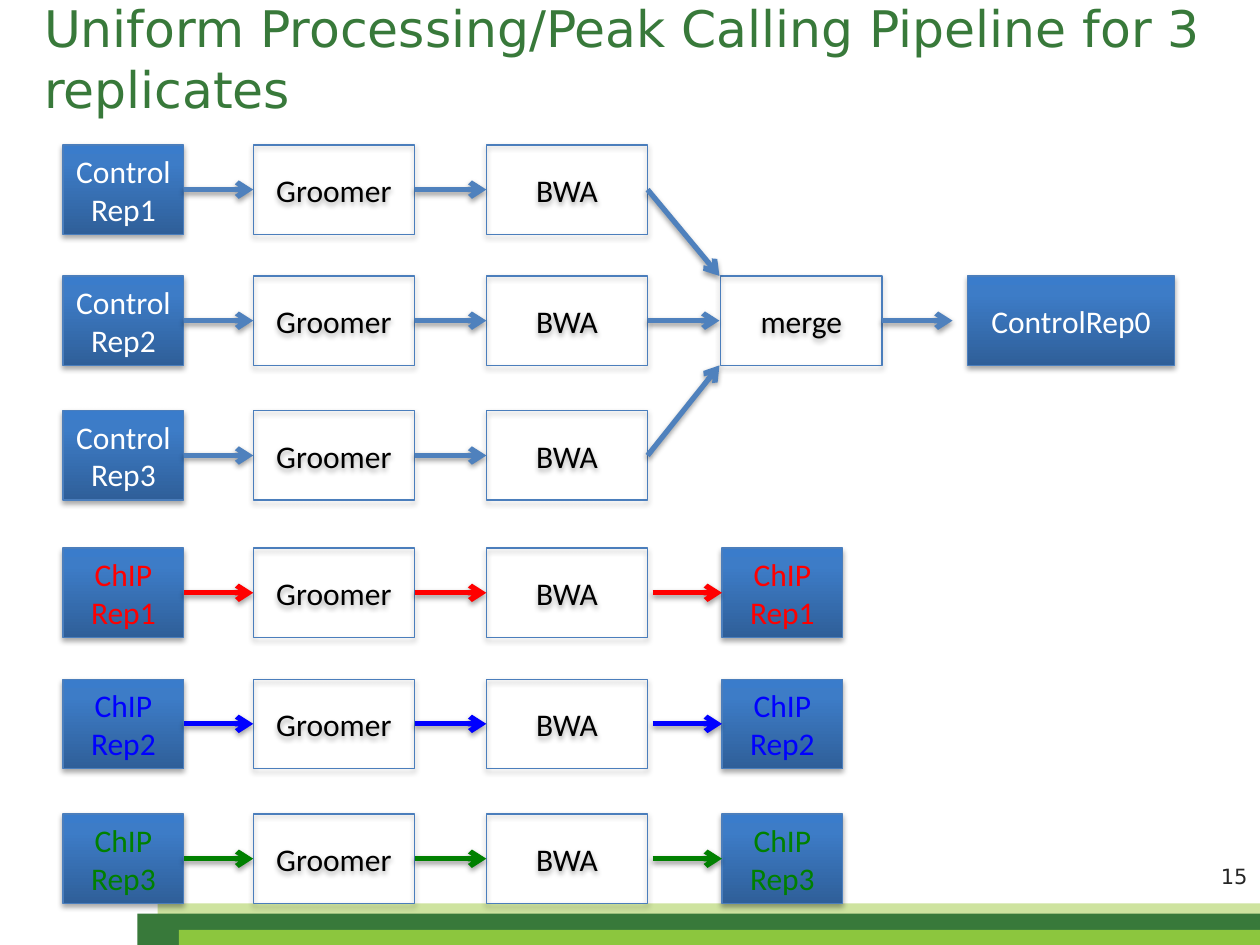
from copy import deepcopy
from dataclasses import dataclass

from pptx import Presentation
from pptx.dml.color import RGBColor as RGB
from pptx.enum.shapes import MSO_CONNECTOR as CONN, MSO_SHAPE as SHAPE
from pptx.enum.text import MSO_ANCHOR as ANCHOR, MSO_AUTO_SIZE as AUTO, PP_ALIGN as ALIGN
from pptx.oxml import parse_xml
from pptx.oxml.ns import nsdecls, qn
from pptx.util import Inches, Pt


@dataclass(frozen=True)
class Theme:
    """Colours, fonts and type sizes of the slide."""
    title: str = "38793A"
    number: str = "262626"
    bands: tuple = ("CEE39F", "38793A", "8CC63E")
    gradient: tuple = ((0, "2F5F99"), (0.8, "3D7CC7"), (1, "3A7CCB"))
    outline: str = "4B7EBC"
    flow: str = "4F81BD"
    light: str = "FFFFFF"
    dark: str = "000000"
    reps: tuple = ("FF0000", "0000FF", "008000")
    head_font: str = "DejaVu Sans"
    body_font: str = "Calibri"
    title_size: float = 28.8
    body_size: float = 18
    number_size: float = 12


@dataclass(frozen=True)
class Box:
    """A region in inches."""
    x: float
    y: float
    w: float
    h: float

    def emu(self):
        """Return left, top, width and height as lengths."""
        return [Inches(v) for v in (self.x, self.y, self.w, self.h)]


T = Theme()
COLS = (0, 1.51, 3.36, 5.22, 7.18)
ROWS = (0, 1.04, 2.11)
DATA_W, STEP_W, RESULT_W, NODE_H = 0.96, 1.28, 1.64, 0.71
GAP = 0.56


def style_text(tf, font, size, color, align):
    """Format every paragraph of a text frame."""
    tf.vertical_anchor = ANCHOR.MIDDLE
    for p in tf.paragraphs:
        p.alignment = align
        p.font.name, p.font.size = font, Pt(size)
        p.font.color.rgb = RGB.from_string(color)


def add_shadow(sp, dist, alpha):
    """Give a shape or connector a soft shadow below it."""
    spPr = sp._element.spPr
    spPr.append(parse_xml(
        f'<a:effectLst {nsdecls("a")}><a:outerShdw blurRad="40000" dist="{dist}" '
        f'dir="5400000" rotWithShape="0"><a:srgbClr val="000000">'
        f'<a:alpha val="{alpha}000"/></a:srgbClr></a:outerShdw></a:effectLst>'))


def fill_gradient(sp):
    """Fill a shape with the theme gradient, running upwards."""
    sp.fill.gradient()
    sp.fill.gradient_angle = 90
    stops = sp._element.spPr.find(qn("a:gradFill")).find(qn("a:gsLst"))
    stops.append(deepcopy(stops[0]))
    for stop, (pos, color) in zip(sp.fill.gradient_stops, T.gradient):
        stop.position = pos
        stop.color.rgb = RGB.from_string(color)


def node(s, box, text, color=T.dark, filled=False):
    """Add one labelled box of the pipeline."""
    sp = s.shapes.add_shape(SHAPE.RECTANGLE, *box.emu())
    if filled:
        fill_gradient(sp)
    else:
        sp.fill.background()
    sp.line.color.rgb = RGB.from_string(T.outline)
    sp.line.width = Pt(0.75)
    add_shadow(sp, 23000, 35)
    sp.text_frame.text = text
    style_text(sp.text_frame, T.body_font, T.body_size, color, ALIGN.CENTER)
    return sp


def arrow(s, start, end, color):
    """Draw an arrow between nodes or (x, y) points."""
    points = [Inches(v) if isinstance(e, tuple) else 0
              for e in (start, end) for v in (e if isinstance(e, tuple) else (0, 0))]
    line = s.shapes.add_connector(CONN.STRAIGHT, *points)
    if not isinstance(start, tuple):
        line.begin_connect(start, 3)
    if not isinstance(end, tuple):
        line.end_connect(end, 1)
    line.line.color.rgb = RGB.from_string(color)
    line.line.width = Pt(3)
    line.line._get_or_add_ln().append(parse_xml(f'<a:tailEnd {nsdecls("a")} type="arrow"/>'))
    add_shadow(line, 20000, 38)


def lane(s, x, y, text, text_color, flow):
    """Add input, Groomer and BWA in a row and return the BWA node."""
    source = node(s, Box(x, y, DATA_W, NODE_H), text, text_color, True)
    groomer, bwa = [node(s, Box(x + c, y, STEP_W, NODE_H), name)
                    for c, name in zip(COLS[1:3], ("Groomer", "BWA"))]
    arrow(s, source, groomer, flow)
    arrow(s, groomer, bwa, flow)
    return bwa


def control_block(s, box):
    """Add three control lanes merging into one result."""
    aligned = [lane(s, box.x, box.y + dy, f"ControlRep{i}", T.light, T.flow)
               for i, dy in enumerate(ROWS, 1)]
    x, y = box.x + COLS[3], box.y + ROWS[1]
    mid = y + NODE_H / 2
    merge = node(s, Box(x, y, STEP_W, NODE_H), "merge")
    for bwa, end_y in zip(aligned, (y, mid, y + NODE_H)):
        arrow(s, bwa, (x - 0.01, end_y), T.flow)
    node(s, Box(box.x + COLS[4], y, RESULT_W, NODE_H), "ControlRep0", T.light, True)
    arrow(s, merge, (x + STEP_W + GAP, mid), T.flow)


def chip_block(s, box):
    """Add three ChIP lanes, each ending in its own result."""
    for i, (dy, color) in enumerate(zip(ROWS, T.reps), 1):
        x, y, text = box.x + COLS[3], box.y + dy, f"ChIP\nRep{i}"
        lane(s, box.x, y, text, color, color)
        result = node(s, Box(x + 0.01, y, DATA_W, NODE_H), text, color, True)
        arrow(s, (x - GAP + 0.02, y + NODE_H / 2), result, color)


def footer(s, box):
    """Add the coloured bands and the slide number above them."""
    for (dx, dy), color in zip(((0.16, 0), (0, 0.08), (0.33, 0.21)), T.bands):
        band = Box(box.x + dx, box.y + dy, box.w - dx, box.h - dy)
        sp = s.shapes.add_shape(SHAPE.RECTANGLE, *band.emu())
        sp.shadow.inherit = False
        sp.fill.solid()
        sp.fill.fore_color.rgb = RGB.from_string(color)
        sp.line.fill.background()
    number = Box(box.x + box.w - 0.58, box.y - 0.42, 0.58, 0.4)
    tf = s.shapes.add_textbox(*number.emu()).text_frame
    tf.word_wrap = True
    tf.text = "15"
    style_text(tf, T.head_font, T.number_size, T.number, ALIGN.RIGHT)


def title(s, box):
    """Place and format the title placeholder."""
    sp = s.shapes.title
    sp.left, sp.top, sp.width, sp.height = box.emu()
    tf = sp.text_frame
    tf.text = "Uniform Processing/Peak Calling Pipeline for 3 replicates"
    tf.auto_size = AUTO.NONE
    style_text(tf, T.head_font, T.title_size, T.title, ALIGN.LEFT)


def main():
    """Build the slide and save it."""
    prs = Presentation()
    prs.slide_width, prs.slide_height = Inches(10), Inches(7.5)
    s = prs.slides.add_slide(prs.slide_layouts[5])
    footer(s, Box(1.09, 7.17, 8.91, 0.33))
    control_block(s, Box(0.5, 1.15, 8.82, 2.82))
    chip_block(s, Box(0.5, 4.35, 6.19, 2.82))
    title(s, Box(0.25, 0.17, 9.42, 0.58))
    prs.save("out.pptx")


if __name__ == "__main__":
    main()
